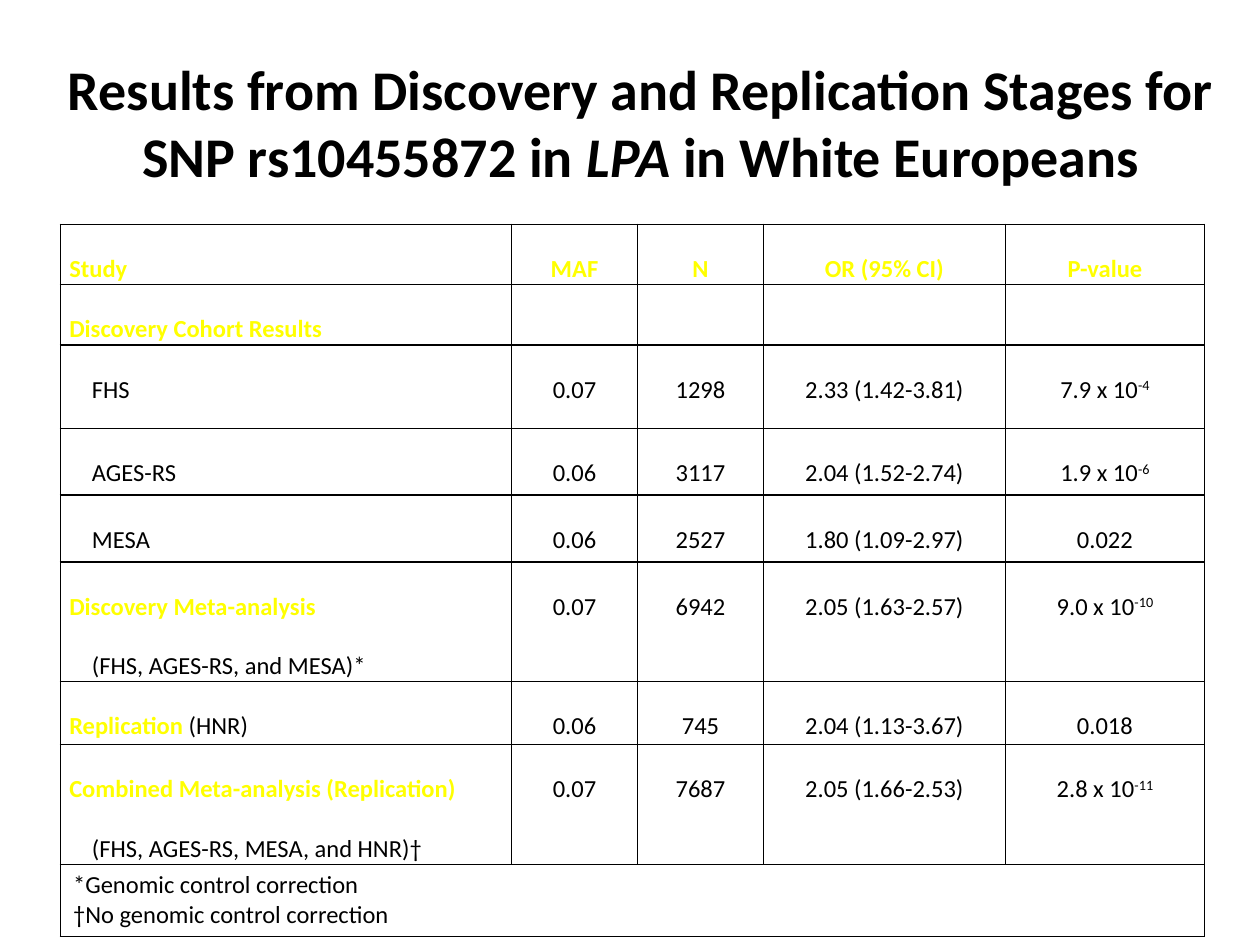
import pptx
import pptx.util
import pptx.dml.color
import pptx.enum.text
import pptx.oxml
import pptx.oxml.ns

Inches, Pt = pptx.util.Inches, pptx.util.Pt
Align, Anchor = pptx.enum.text.PP_ALIGN, pptx.enum.text.MSO_ANCHOR
BLACK = pptx.dml.color.RGBColor(0, 0, 0)
WHITE = pptx.dml.color.RGBColor(255, 255, 255)
YELLOW = pptx.dml.color.RGBColor(255, 255, 0)

TITLE = [("Results from Discovery and Replication Stages for SNP rs10455872 in ", False),
         ("LPA", True), (" in White Europeans", False)]
HEAD = ["Study", "MAF", "N", "OR (95% CI)", "P-value"]
STUDIES = [
    ("Discovery Cohort Results", "", []),
    ("", "FHS", ["0.07", "1298", "2.33 (1.42-3.81)", "7.9 x 10^-4"]),
    ("", "AGES-RS", ["0.06", "3117", "2.04 (1.52-2.74)", "1.9 x 10^-6"]),
    ("", "MESA", ["0.06", "2527", "1.80 (1.09-2.97)", "0.022"]),
    ("Discovery Meta-analysis", "(FHS, AGES-RS, and MESA)*",
     ["0.07", "6942", "2.05 (1.63-2.57)", "9.0 x 10^-10"]),
    ("Replication ", "(HNR)", ["0.06", "745", "2.04 (1.13-3.67)", "0.018"]),
    ("Combined Meta-analysis (Replication)", "(FHS, AGES-RS, MESA, and HNR)†",
     ["0.07", "7687", "2.05 (1.66-2.53)", "2.8 x 10^-11"]),
]
NOTES = ["*Genomic control correction", "†No genomic control correction"]
WIDTHS = [3.58, 1, 1, 1.92, 1.58]
HEIGHTS = [0.48, 0.48, 0.66, 0.53, 0.53, 0.95, 0.5, 0.95, 0.57]


def add_run(para, text, size=14, color=BLACK, bold=False):
    run = para.add_run()
    run.text = text
    font = run.font
    font.name, font.size, font.bold = "Calibri", Pt(size), bold
    font.color.rgb = color
    return run


def add_line(cell, first, align=Align.LEFT, space=2.0, indent=0):
    frame = cell.text_frame
    para = frame.paragraphs[0] if first else frame.add_paragraph()
    para.alignment, para.line_spacing = align, space
    if indent:
        props = para._p.get_or_add_pPr()
        props.set("marL", str(Inches(indent)))
        props.set("indent", "0")
    return para


def fill_value(cell, text, **look):
    base, _, power = text.partition("^")
    para = add_line(cell, True, Align.CENTER)
    add_run(para, base, **look)
    if power:
        add_run(para, power, **look).font._element.set("baseline", "30000")


def fill_study(cell, label, detail):
    para = None
    if label:
        para = add_line(cell, True)
        add_run(para, label, color=YELLOW, bold=True)
    if detail:
        if not label.endswith(" "):
            para = add_line(cell, para is None, indent=0.18)
        add_run(para, detail)


def set_border(cell):
    props = cell._tc.get_or_add_tcPr()
    for spot, side in enumerate(("lnL", "lnR", "lnT", "lnB")):
        props.insert(spot, pptx.oxml.parse_xml(
            f'<a:{side} {pptx.oxml.ns.nsdecls("a")} w="12700"><a:solidFill>'
            f'<a:srgbClr val="{BLACK}"/></a:solidFill></a:{side}>'))


def add_title(slide):
    title = slide.shapes.title
    title.left, title.top = Inches(0.17), Inches(0.3)
    title.width, title.height = Inches(9.83), Inches(1.25)
    frame = title.text_frame
    frame.word_wrap, frame.vertical_anchor = True, Anchor.BOTTOM
    para = frame.paragraphs[0]
    para.alignment = Align.CENTER
    for text, slant in TITLE:
        add_run(para, text, size=32, bold=True).font.italic = slant


def add_grid(slide):
    grid = slide.shapes.add_table(
        len(HEIGHTS), len(WIDTHS), Inches(0.48), Inches(1.78),
        Inches(sum(WIDTHS)), Inches(sum(HEIGHTS))).table
    grid.first_row = grid.horz_banding = False
    for col, width in zip(grid.columns, WIDTHS):
        col.width = Inches(width)
    for row, height in zip(grid.rows, HEIGHTS):
        row.height = Inches(height)
    for cell in grid.iter_cells():
        cell.fill.background()
        set_border(cell)
        cell.margin_left = cell.margin_right = Inches(0.07)
        cell.margin_top = cell.margin_bottom = 0

    fill_study(grid.cell(0, 0), HEAD[0], "")
    for col, text in enumerate(HEAD[1:], 1):
        fill_value(grid.cell(0, col), text, color=YELLOW, bold=True)
    for row, (label, detail, values) in enumerate(STUDIES, 1):
        fill_study(grid.cell(row, 0), label, detail)
        for col, text in enumerate(values, 1):
            fill_value(grid.cell(row, col), text)
    for col in range(len(WIDTHS)):
        cell = grid.cell(len(STUDIES), col)
        cell.fill.solid()
        cell.fill.fore_color.rgb = WHITE

    last = len(HEIGHTS) - 1
    note = grid.cell(last, 0)
    note.merge(grid.cell(last, len(WIDTHS) - 1))
    note.vertical_anchor = Anchor.BOTTOM
    note.margin_left = note.margin_right = Inches(0.1)
    note.margin_top = note.margin_bottom = Inches(0.05)
    for spot, text in enumerate(NOTES):
        add_run(add_line(note, spot == 0, space=1.0), text)


def main():
    deck = pptx.Presentation()
    deck.slide_width, deck.slide_height = Inches(10), Inches(7.5)
    slide = deck.slides.add_slide(deck.slide_layouts[5])
    add_title(slide)
    add_grid(slide)
    deck.save("out.pptx")


if __name__ == "__main__":
    main()
